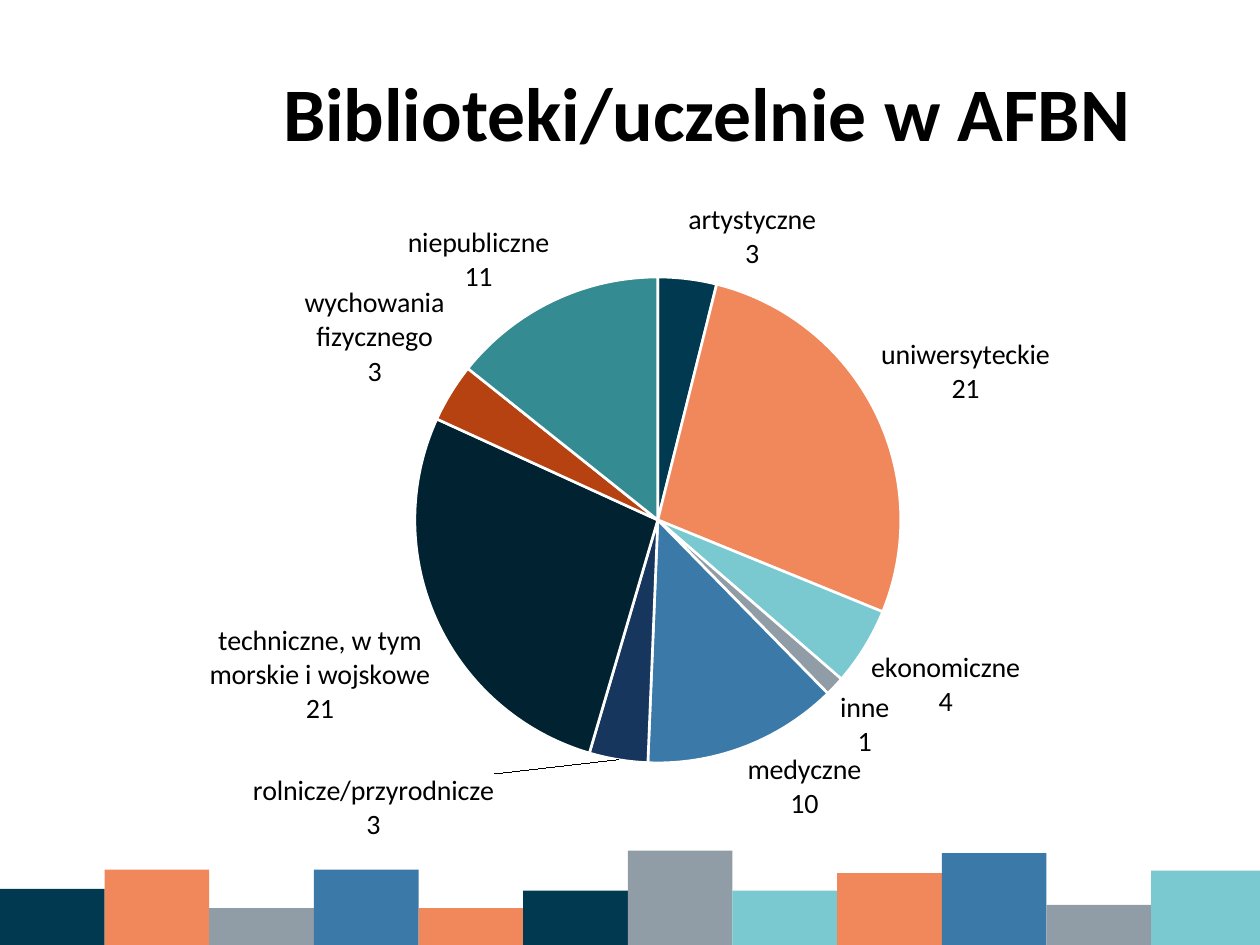
from typing import NamedTuple

from lxml.etree import SubElement
from pptx import Presentation
from pptx.chart.data import CategoryChartData
from pptx.dml.color import RGBColor
from pptx.enum.chart import XL_CHART_TYPE, XL_LABEL_POSITION
from pptx.enum.shapes import MSO_SHAPE
from pptx.enum.text import MSO_ANCHOR, PP_ALIGN
from pptx.oxml.ns import qn
from pptx.util import Pt

SLIDE_WIDTH, SLIDE_HEIGHT = 720, 540
BAR_PITCH = 59.8
FONT = "Calibri"
NAVY, ORANGE, GREY, BLUE, AQUA = "013950", "F0885C", "909DA6", "3B79A8", "7AC9D0"
BLACK, WHITE = "000000", "FFFFFF"


class Bar(NamedTuple):
    height: float
    colour: str


class Slice(NamedTuple):
    name: str
    count: int
    colour: str


BARS = [
    Bar(32, NAVY), Bar(43, ORANGE), Bar(21, GREY), Bar(43, BLUE),
    Bar(21, ORANGE), Bar(31, NAVY), Bar(54, GREY), Bar(31, AQUA),
    Bar(41, ORANGE), Bar(52.5, BLUE), Bar(23, GREY), Bar(42.5, AQUA),
]
SLICES = [
    Slice("artystyczne", 3, NAVY),
    Slice("uniwersyteckie", 21, ORANGE),
    Slice("ekonomiczne", 4, AQUA),
    Slice("inne", 1, GREY),
    Slice("medyczne", 10, BLUE),
    Slice("rolnicze/przyrodnicze", 3, "17365D"),
    Slice("techniczne, w tym morskie i wojskowe", 21, "012230"),
    Slice("wychowania fizycznego", 3, "B64211"),
    Slice("niepubliczne", 11, "348B92"),
]
MOVED_LABEL = 5  # rolnicze/przyrodnicze


def colour(value: str) -> RGBColor:
    return RGBColor.from_string(value)


def set_font(font, size: float, bold: bool = False) -> None:
    font.name = FONT
    font.size = Pt(size)
    font.bold = bold
    font.color.rgb = colour(BLACK)


def draw_bar(page, index: int, bar: Bar) -> None:
    left = index * BAR_PITCH
    right = SLIDE_WIDTH if index == len(BARS) - 1 else left + BAR_PITCH
    box = page.shapes.add_shape(
        MSO_SHAPE.RECTANGLE, Pt(left), Pt(SLIDE_HEIGHT - bar.height),
        Pt(right - left), Pt(bar.height))
    box.shadow.inherit = False
    box.fill.solid()
    box.fill.fore_color.rgb = colour(bar.colour)
    box.line.fill.background()


def draw_title(page, text: str) -> None:
    box = page.shapes.add_textbox(Pt(150.5), Pt(21), Pt(507), Pt(85))
    frame = box.text_frame
    frame.word_wrap = True
    frame.vertical_anchor = MSO_ANCHOR.MIDDLE
    para = frame.paragraphs[0]
    para.alignment = PP_ALIGN.CENTER
    span = para.add_run()
    span.text = text
    set_font(span.font, 43.2, bold=True)


def make_layout(**settings):
    """Return a manual chart layout with the given settings."""
    def fill(layout):
        manual = SubElement(layout, qn("c:manualLayout"))
        for name, value in settings.items():
            SubElement(manual, qn(f"c:{name}")).set("val", str(value))
    return fill


def place_layout(parent, position: int, fill) -> None:
    for old in parent.findall(qn("c:layout")):
        parent.remove(old)
    layout = SubElement(parent, qn("c:layout"))
    parent.insert(position, layout)
    fill(layout)


def finish_label(element) -> None:
    """Show name above value, and let long names wrap."""
    separator = SubElement(element, qn("c:separator"))
    separator.text = "\n"
    element.find(qn("c:showBubbleSize")).addnext(separator)
    element.find(qn("c:txPr")).find(qn("a:bodyPr")).set("wrap", "square")


def draw_pie(page) -> None:
    data = CategoryChartData()
    data.categories = [part.name for part in SLICES]
    data.add_series("Series 1", [part.count for part in SLICES])
    chart = page.shapes.add_chart(
        XL_CHART_TYPE.PIE, Pt(8.6), Pt(106), Pt(703), Pt(402.5), data).chart
    chart.has_legend = False
    chart.has_title = False
    set_font(chart.font, 10)
    plot = chart.plots[0]
    plot.vary_by_categories = True
    series = plot.series[0]

    # Slices
    for index, part in enumerate(SLICES):
        style = series.points[index].format
        style.fill.solid()
        style.fill.fore_color.rgb = colour(part.colour)
        style.line.color.rgb = colour(WHITE)
        style.line.width = Pt(1.5)

    # Labels
    labels = series.data_labels
    labels.show_category_name = True
    labels.show_value = True
    labels.show_percentage = False
    labels.position = XL_LABEL_POSITION.OUTSIDE_END
    set_font(labels.font, 16)
    finish_label(labels._element)

    moved = series.points[MOVED_LABEL].data_label
    moved.position = XL_LABEL_POSITION.OUTSIDE_END
    set_font(moved.font, 16)
    element = labels._element.find(qn("c:dLbl"))
    element.find(qn("c:showCatName")).set("val", "1")
    element.find(qn("c:showPercent")).set("val", "0")
    finish_label(element)
    place_layout(element, 1, make_layout(x=-0.1, y=0.01))

    # Pie position inside the chart
    plot_area = chart._chartSpace.chart.plotArea
    place_layout(plot_area, 0, make_layout(
        layoutTarget="inner", xMode="edge", yMode="edge",
        x=0.325, y=0.13, w=0.395, h=0.69))


def main() -> None:
    deck = Presentation()
    deck.slide_width = Pt(SLIDE_WIDTH)
    deck.slide_height = Pt(SLIDE_HEIGHT)
    page = deck.slides.add_slide(deck.slide_layouts[6])

    # Skyline along the bottom edge
    for index, bar in enumerate(BARS):
        draw_bar(page, index, bar)

    draw_title(page, "Biblioteki/uczelnie w AFBN")
    draw_pie(page)
    deck.save("out.pptx")


if __name__ == "__main__":
    main()
